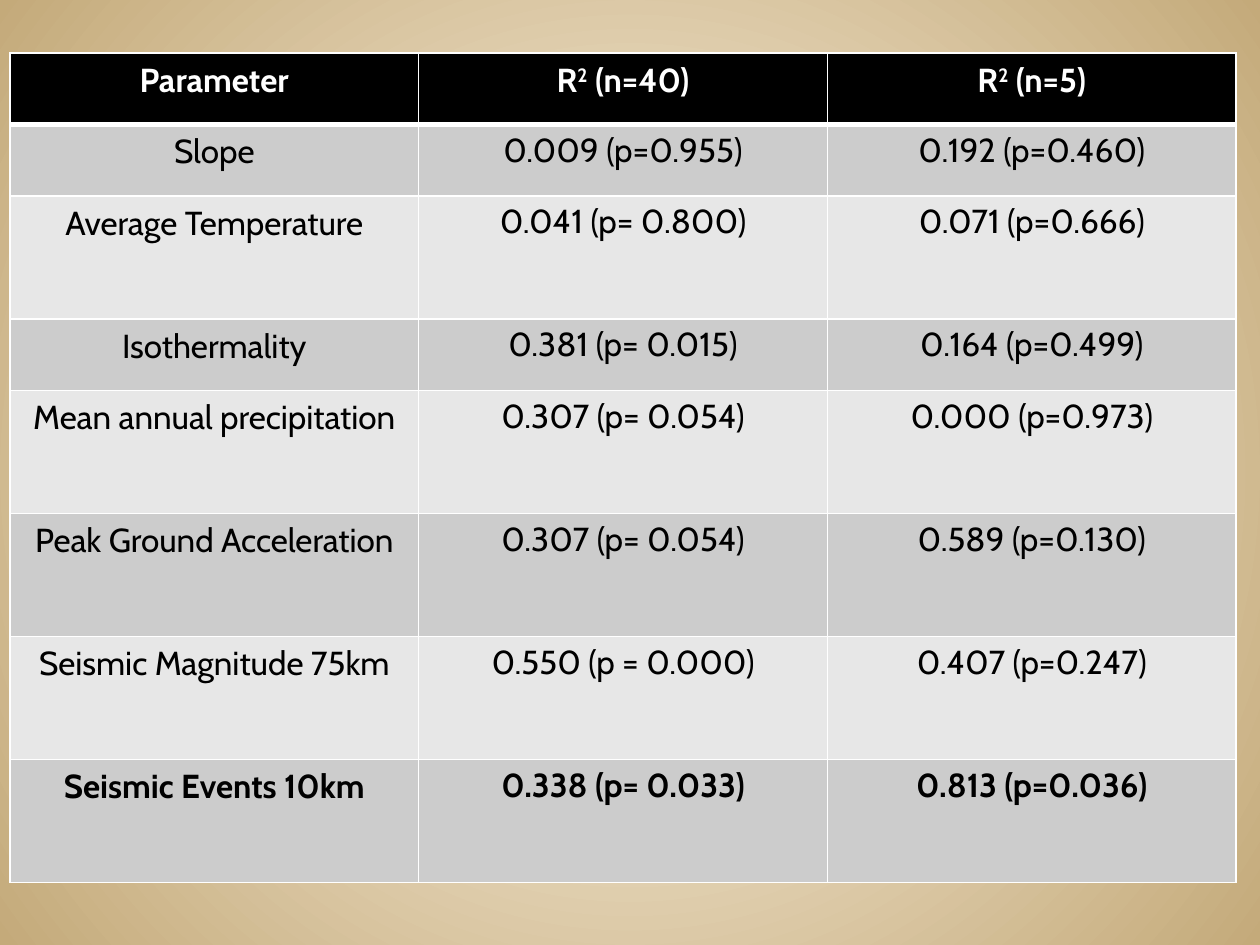
from lxml.etree import SubElement
from pptx import Presentation
from pptx.dml.color import RGBColor
from pptx.enum.text import PP_ALIGN
from pptx.oxml.ns import qn
from pptx.util import Cm, Pt

COLORS = {
    "glow": "FFF7E8",
    "edge": "C4AA7A",
    "header": "000000",
    "header_text": "FFFFFF",
    "body_text": "000000",
    "odd_row": "CCCCCC",
    "even_row": "E7E7E7",
    "border": "FFFFFF",
}
FONT = "Cabin"
HEADER = [["Parameter"], ["R", "2", " (n=40)"], ["R", "2", " (n=5)"]]
RESULTS = [
    ("Slope", "0.009 (p=0.955)", "0.192 (p=0.460)"),
    ("Average Temperature", "0.041 (p= 0.800)", "0.071 (p=0.666)"),
    ("Isothermality", "0.381 (p= 0.015)", "0.164 (p=0.499)"),
    ("Mean annual precipitation", "0.307 (p= 0.054)", "0.000 (p=0.973)"),
    ("Peak Ground Acceleration", "0.307 (p= 0.054)", "0.589 (p=0.130)"),
    ("Seismic Magnitude 75km", "0.550 (p = 0.000)", "0.407 (p=0.247)"),
    ("Seismic Events 10km", "0.338 (p= 0.033)", "0.813 (p=0.036)"),
]
SHORT, TALL = Cm(1.44), Cm(2.48)
ROW_HEIGHTS = [SHORT, SHORT, TALL, SHORT, TALL, TALL, TALL, TALL]
COLUMN_WIDTH = Cm(8.24)


def rgb(name):
    return RGBColor.from_string(COLORS[name])


def paint_background(slide):
    fill = slide.background.fill
    fill.gradient()
    for stop, name in zip(fill.gradient_stops, ("glow", "edge")):
        stop.color.rgb = rgb(name)
    gradient = slide.element.find(".//" + qn("a:gradFill"))
    gradient.remove(gradient.find(qn("a:lin")))
    circle = SubElement(gradient, qn("a:path"), path="circle")
    SubElement(circle, qn("a:fillToRect"), l="50000", t="50000", r="50000", b="50000")


def set_borders(cell, top=1, bottom=1):
    properties = cell._tc.get_or_add_tcPr()
    for side, width in (("L", 1), ("R", 1), ("T", top), ("B", bottom)):
        line = SubElement(properties, qn(f"a:ln{side}"), w=str(Pt(width)))
        solid = SubElement(line, qn("a:solidFill"))
        SubElement(solid, qn("a:srgbClr"), val=COLORS["border"])


def set_margins(cell, horizontal, vertical):
    cell.margin_left = cell.margin_right = horizontal
    cell.margin_top = cell.margin_bottom = vertical


def set_fill(cell, name):
    cell.fill.solid()
    cell.fill.fore_color.rgb = rgb(name)


def add_run(paragraph, text, color, bold):
    run = paragraph.add_run()
    run.text = text
    run.font.name = FONT
    run.font.size = Pt(19)
    run.font.bold = bold
    run.font.color.rgb = rgb(color)
    return run


def fill_header(cell, parts):
    set_borders(cell, bottom=3)
    set_margins(cell, Cm(0.3), Cm(0.15))
    set_fill(cell, "header")
    paragraph = cell.text_frame.paragraphs[0]
    paragraph.alignment = PP_ALIGN.CENTER
    for part in parts:
        run = add_run(paragraph, part, "header_text", True)
        if part == "2":
            run.font._element.set("baseline", "30000")


def fill_result(cell, text, row, is_value):
    set_borders(cell, top=3 if row == 1 else 1)
    set_fill(cell, "odd_row" if row % 2 else "even_row")
    paragraph = cell.text_frame.paragraphs[0]
    paragraph.alignment = PP_ALIGN.CENTER
    if is_value:
        set_margins(cell, Cm(0.23), 0)
        paragraph.line_spacing = 1.15
    else:
        set_margins(cell, Cm(0.3), Cm(0.15))
    add_run(paragraph, text, "body_text", row == len(RESULTS))


def add_results_table(slide):
    table = slide.shapes.add_table(
        len(ROW_HEIGHTS), len(HEADER), Cm(0.2), Cm(1.07),
        COLUMN_WIDTH * len(HEADER), sum(ROW_HEIGHTS),
    ).table
    for column in table.columns:
        column.width = COLUMN_WIDTH
    for row, height in zip(table.rows, ROW_HEIGHTS):
        row.height = height
    for column, parts in enumerate(HEADER):
        fill_header(table.cell(0, column), parts)
    for row, result in enumerate(RESULTS, start=1):
        for column, text in enumerate(result):
            fill_result(table.cell(row, column), text, row, column > 0)


def main():
    presentation = Presentation()
    presentation.slide_width = Cm(25.4)
    presentation.slide_height = Cm(19.05)
    slide = presentation.slides.add_slide(presentation.slide_layouts[6])
    paint_background(slide)
    add_results_table(slide)
    presentation.save("out.pptx")


if __name__ == "__main__":
    main()
